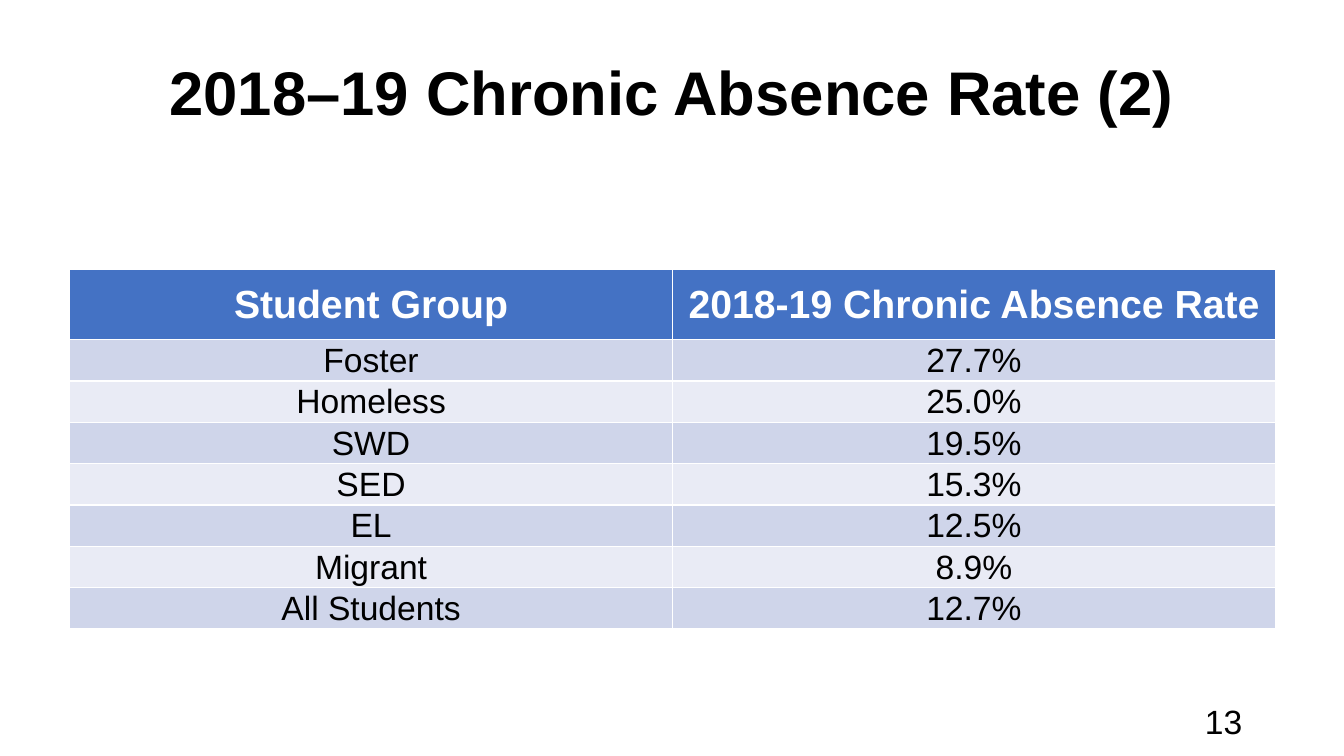
from pptx import Presentation
from pptx import util as u
from pptx.dml.color import RGBColor
from pptx.enum import text

BLACK = RGBColor(0x00, 0x00, 0x00)
WHITE = RGBColor(0xFF, 0xFF, 0xFF)
HEADER_BLUE = RGBColor(0x44, 0x72, 0xC4)
BAND_FILLS = RGBColor(0xE9, 0xEB, 0xF5), RGBColor(0xCF, 0xD5, 0xEA)

ROWS = [
    ("Student Group", "2018-19 Chronic Absence Rate"),
    ("Foster", "27.7%"),
    ("Homeless", "25.0%"),
    ("SWD", "19.5%"),
    ("SED", "15.3%"),
    ("EL", "12.5%"),
    ("Migrant", "8.9%"),
    ("All Students", "12.7%"),
]
HEADER_HEIGHT = u.Inches(0.7)
ROW_HEIGHT = u.Inches(0.41)
COLUMN_WIDTH = u.Inches(5.98)


def write(frame, wording, size, color, alignment, bold=False):
    """Fill a text frame or table cell with one formatted paragraph."""
    frame.vertical_anchor = text.MSO_ANCHOR.MIDDLE
    text_frame = getattr(frame, "text_frame", frame)
    paragraph = text_frame.paragraphs[0]
    paragraph.text = wording
    paragraph.alignment = alignment
    paragraph.font.name = "Arial"
    paragraph.font.size = u.Pt(size)
    paragraph.font.bold = bold
    paragraph.font.color.rgb = color


presentation = Presentation()
presentation.slide_width = u.Inches(13.33)
presentation.slide_height = u.Inches(7.5)
slide = presentation.slides.add_slide(presentation.slide_layouts[5])

# Title across the full width
title = slide.shapes.title
title.left, title.top = 0, 0
title.width, title.height = presentation.slide_width, u.Inches(1.8)
write(title.text_frame, "2018–19 Chronic Absence Rate (2)", 44, BLACK,
      text.PP_ALIGN.CENTER, bold=True)

# Absence rates by student group
table = slide.shapes.add_table(
    len(ROWS), 2, u.Inches(0.69), u.Inches(2.67), 2 * COLUMN_WIDTH,
    HEADER_HEIGHT + (len(ROWS) - 1) * ROW_HEIGHT).table
for column in table.columns:
    column.width = COLUMN_WIDTH
for row_index, values in enumerate(ROWS):
    is_header = row_index == 0
    table.rows[row_index].height = HEADER_HEIGHT if is_header else ROW_HEIGHT
    for column_index, value in enumerate(values):
        cell = table.cell(row_index, column_index)
        cell.margin_left = cell.margin_right = cell.margin_top = u.Inches(0.01)
        cell.margin_bottom = 0
        cell.fill.solid()
        cell.fill.fore_color.rgb = HEADER_BLUE if is_header else BAND_FILLS[row_index % 2]
        write(cell, value, 28 if is_header else 24, WHITE if is_header else BLACK,
              text.PP_ALIGN.CENTER, bold=is_header)

# Page number
page_number = slide.shapes.add_textbox(
    u.Inches(9.42), u.Inches(6.95), u.Inches(3), u.Inches(0.4))
page_number.text_frame.word_wrap = True
write(page_number.text_frame, "13", 24, BLACK, text.PP_ALIGN.RIGHT)

presentation.save("out.pptx")
